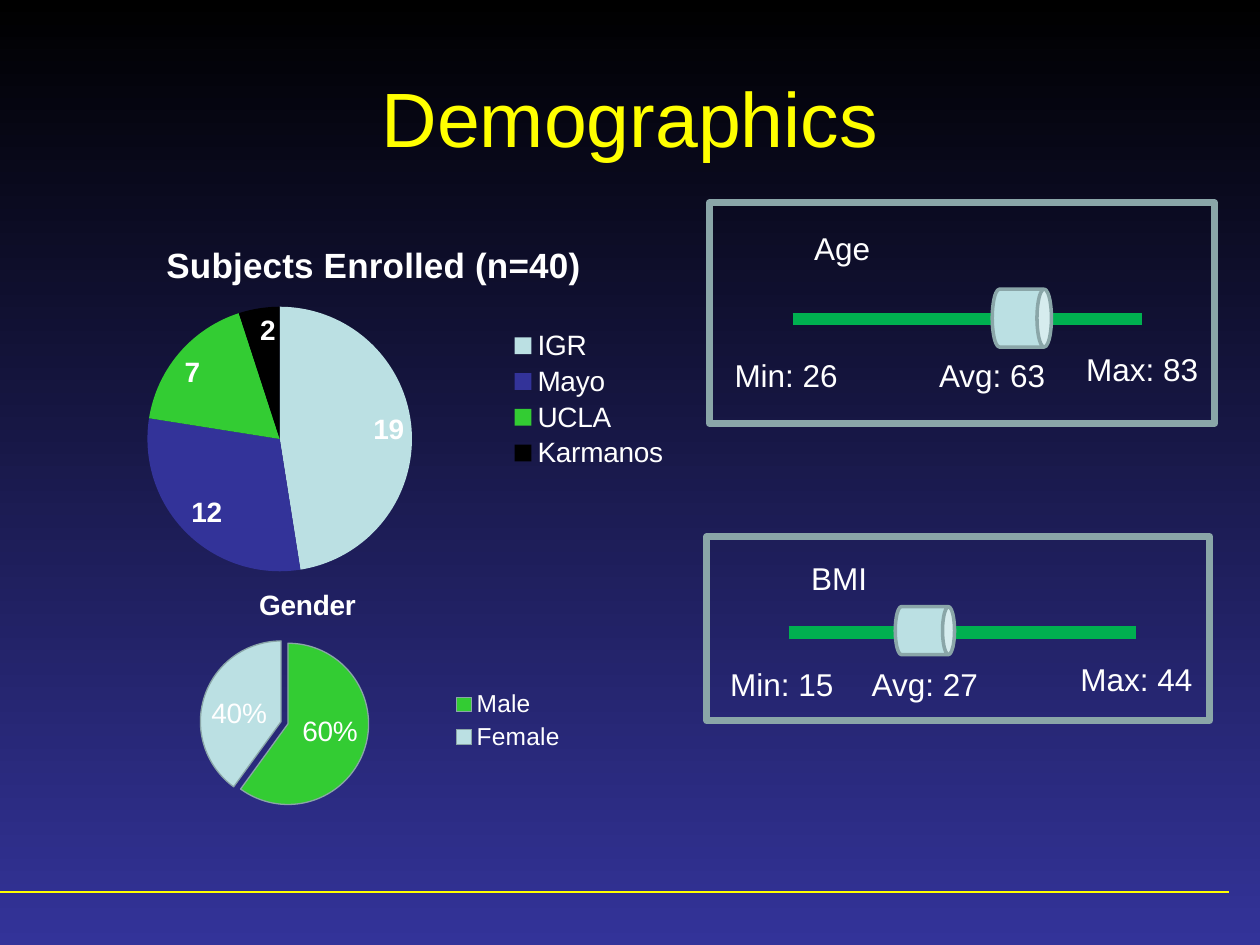
from lxml import etree
from pptx import Presentation
from pptx.chart.data import CategoryChartData
from pptx.dml.color import RGBColor
from pptx.enum.chart import XL_CHART_TYPE, XL_LABEL_POSITION, XL_LEGEND_POSITION
from pptx.enum.shapes import MSO_CONNECTOR, MSO_SHAPE
from pptx.enum.text import MSO_ANCHOR, PP_ALIGN
from pptx.oxml.ns import qn
from pptx.util import Inches, Pt

PIE = XL_CHART_TYPE.PIE
INSIDE_END = XL_LABEL_POSITION.INSIDE_END
RIGHT = XL_LEGEND_POSITION.RIGHT
CENTER = PP_ALIGN.CENTER
FONT = "Arial"
COLORS = {k: RGBColor.from_string(v) for k, v in {
    "black": "000000", "navy": "333399", "yellow": "FFFF00", "white": "FFFFFF",
    "bar": "00B050", "pale": "BBE0E3", "frame": "8AA6A8", "green": "33CC33",
}.items()}

prs = Presentation()
prs.slide_width, prs.slide_height = Inches(10), Inches(7.5)
COL, ROW = prs.slide_width / 100, prs.slide_height / 75  # grid of 100 x 75 cells
s = prs.slides.add_slide(prs.slide_layouts[5])


def cells(x, y, w, h):
    return [int(v) for v in (x * COL, y * ROW, w * COL, h * ROW)]


def add_line(x1, x2, y, color, width):
    ln = s.shapes.add_connector(MSO_CONNECTOR.STRAIGHT, *cells(x1, y, x2, y))
    ln.line.color.rgb = COLORS[color]
    ln.line.width = Pt(width)
    etree.SubElement(ln._element.spPr, qn("a:effectLst"))


# Background gradient and footer rule
fill = s.background.fill
fill.gradient()
fill.gradient_angle = 270
for stop, name in zip(fill.gradient_stops, ("black", "navy")):
    stop.color.rgb = COLORS[name]
add_line(0, 97.5, 70.8, "yellow", 0.75)

# Title
title = s.shapes.title
title.left, title.top, title.width, title.height = cells(5, 3, 90, 12.5)
tf = title.text_frame
tf.vertical_anchor = MSO_ANCHOR.MIDDLE
p = tf.paragraphs[0]
p.alignment = CENTER
r = p.add_run()
r.text = "Demographics"
r.font.name, r.font.size = FONT, Pt(44)
r.font.color.rgb = COLORS["yellow"]

# Range gauges: frame, bar (x1, x2, y), marker, labels
gauges = [
    ((56.3, 16.1, 40.1, 17.5), (62.9, 90.6, 25.3), (78.8, 22.9, 4.6, 4.7),
     [("Age", 59.2, 17.7, 15.3), ("Max: 83", 84.9, 27.3, 11.5),
      ("Min: 26", 57.1, 27.8, 10.6), ("Avg: 63", 71.1, 27.8, 15.3)]),
    ((56.1, 42.6, 39.9, 14.6), (62.6, 90.2, 50.2), (71.5, 47.7, 3.8, 4.7),
     [("BMI", 59, 43.9, 15.2), ("Max: 44", 84.5, 51.9, 11.4),
      ("Min: 15", 56.8, 52.3, 10.5), ("Avg: 27", 68, 52.3, 10.8)]),
]
for frame, bar, marker, labels in gauges:
    add_line(*bar, "bar", 7)
    for kind, box, width in ((MSO_SHAPE.CAN, marker, 2), (MSO_SHAPE.RECTANGLE, frame, 4)):
        sp = s.shapes.add_shape(kind, *cells(*box))
        sp.shadow.inherit = False
        sp.line.color.rgb = COLORS["frame"]
        sp.line.width = Pt(width)
        if kind == MSO_SHAPE.CAN:
            sp.rotation = 90
            sp.fill.solid()
            sp.fill.fore_color.rgb = COLORS["pale"]
        else:
            sp.fill.background()
    for text, x, y, w in labels:
        tf = s.shapes.add_textbox(*cells(x, y, w, 3.7)).text_frame
        tf.word_wrap = True
        p = tf.paragraphs[0]
        p.alignment = CENTER
        r = p.add_run()
        r.text = text
        r.font.name, r.font.size = FONT, Pt(18)
        r.font.color.rgb = COLORS["white"]

# Pie charts; layouts are shares of the chart's size
pies = [
    dict(box=(4.2, 16.7, 50, 30), title="Subjects Enrolled (n=40)", title_size=20,
         title_at=(0.17, 0.07), plot=(0.15, 0.25, 0.42, 0.71), legend_size=16,
         cats=["IGR", "Mayo", "UCLA", "Karmanos"], vals=[19, 12, 7, 2],
         colors=["pale", "navy", "green", "black"], percent=False),
    dict(box=(7.5, 44.4, 38.4, 25.6), title="Gender ", title_size=16,
         title_at=(0.33, 0.07), plot=(0.23, 0.26, 0.34, 0.5), legend_size=14,
         cats=["Gender", "Male", "Female"], vals=[None, 60, 40],
         colors=["pale", "green", "pale"], percent=True),
]
for pie in pies:
    data = CategoryChartData()
    data.categories = pie["cats"]
    data.add_series("Series 1", pie["vals"])
    chart = s.shapes.add_chart(PIE, *cells(*pie["box"]), data).chart
    chart.font.name, chart.font.size = FONT, Pt(16)
    chart.font.color.rgb = COLORS["white"]

    chart.has_title = True
    r = chart.chart_title.text_frame.paragraphs[0].add_run()
    r.text = pie["title"]
    r.font.name, r.font.size, r.font.bold = FONT, Pt(pie["title_size"]), True
    r.font.color.rgb = COLORS["white"]

    chart.has_legend = True
    legend = chart.legend
    legend.position = RIGHT
    legend.include_in_layout = False
    legend.font.name, legend.font.size = FONT, Pt(pie["legend_size"])
    legend.font.color.rgb = COLORS["white"]

    plot = chart.plots[0]
    plot.vary_by_categories = True
    plot.has_data_labels = True
    dl = plot.data_labels
    dl.show_value, dl.show_percentage = not pie["percent"], pie["percent"]
    dl.number_format = "0%" if pie["percent"] else "General"
    dl.number_format_is_linked = False
    dl.position = INSIDE_END
    dl.font.name, dl.font.size, dl.font.bold = FONT, Pt(16), not pie["percent"]
    dl.font.color.rgb = COLORS["white"]
    for i, name in enumerate(pie["colors"]):
        fmt = plot.series[0].points[i].format
        fmt.fill.solid()
        fmt.fill.fore_color.rgb = COLORS[name]
        if pie["percent"]:
            fmt.line.color.rgb = COLORS["frame"]
            fmt.line.width = Pt(0.75)
        else:
            fmt.line.fill.background()

    # Fixed places for the title and the plot
    root = chart._chartSpace.chart
    for part, after, place in (("c:title", "c:tx", pie["title_at"]),
                               ("c:plotArea", None, pie["plot"])):
        parent = root.find(qn(part))
        for old in parent.findall(qn("c:layout")):
            parent.remove(old)
        layout = etree.Element(qn("c:layout"))
        manual = etree.SubElement(layout, qn("c:manualLayout"))
        if after is None:
            etree.SubElement(manual, qn("c:layoutTarget"), val="inner")
        for axis in "xy":
            etree.SubElement(manual, qn(f"c:{axis}Mode"), val="edge")
        for key, value in zip("xywh", place):
            etree.SubElement(manual, qn(f"c:{key}"), val=str(value))
        parent.insert(1 if after else 0, layout)

    # Gender pie: hide the empty category, pull out the last slice
    if pie["percent"]:
        entry = etree.Element(qn("c:legendEntry"))
        etree.SubElement(entry, qn("c:idx"), val="0")
        etree.SubElement(entry, qn("c:delete"), val="1")
        legend._element.find(qn("c:legendPos")).addnext(entry)
        last = root.findall(".//" + qn("c:dPt"))[-1]
        explosion = etree.Element(qn("c:explosion"), val="9")
        last.find(qn("c:spPr")).addprevious(explosion)

prs.save("out.pptx")
